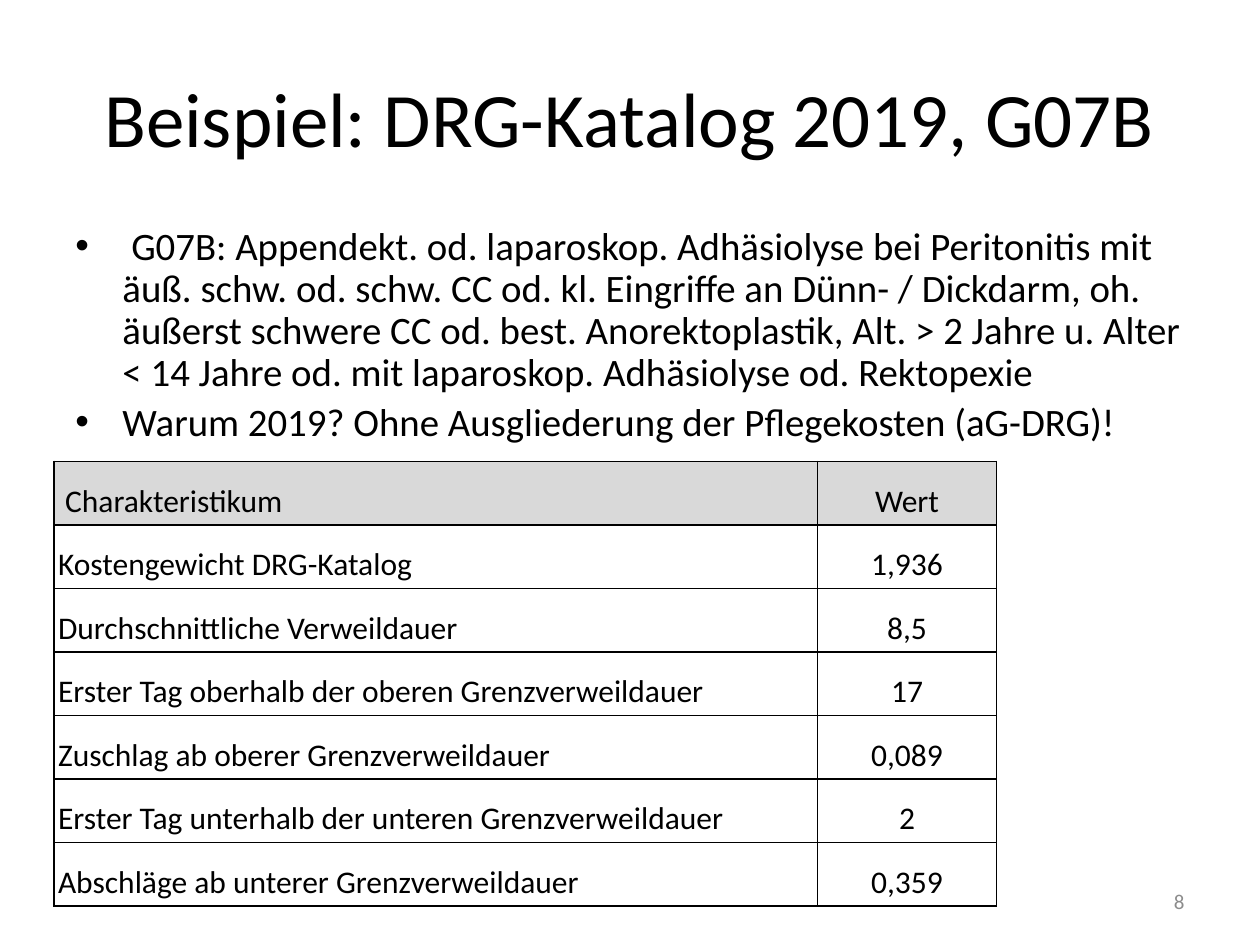
from dataclasses import dataclass

from lxml.etree import SubElement
from pptx import Presentation
from pptx.dml.color import RGBColor
from pptx.enum.text import MSO_ANCHOR, PP_ALIGN
from pptx.oxml.ns import qn
from pptx.util import Cm, Pt


@dataclass(frozen=True)
class Theme:
    """Colours, font and type sizes of the slide."""
    font: str = "Calibri"
    text: str = "000000"
    muted: str = "8C8C8C"
    header: str = "D9D9D9"
    border: str = "000000"
    title_size: float = 44
    body_size: float = 22.2
    table_size: float = 18
    number_size: float = 12


THEME = Theme()

BULLETS = [
    " G07B: Appendekt. od. laparoskop. Adhäsiolyse bei Peritonitis mit äuß. schw. od. schw. CC "
    "od. kl. Eingriffe an Dünn- / Dickdarm, oh. äußerst schwere CC od. best. Anorektoplastik, "
    "Alt. > 2 Jahre u. Alter < 14 Jahre od. mit laparoskop. Adhäsiolyse od. Rektopexie",
    "Warum 2019? Ohne Ausgliederung der Pflegekosten (aG-DRG)!",
]

ROWS = [
    (" Charakteristikum", "Wert"),
    ("Kostengewicht DRG-Katalog", "1,936"),
    ("Durchschnittliche Verweildauer", "8,5"),
    ("Erster Tag oberhalb der oberen Grenzverweildauer", "17"),
    ("Zuschlag ab oberer Grenzverweildauer", "0,089"),
    ("Erster Tag unterhalb der unteren Grenzverweildauer", "2"),
    ("Abschläge ab unterer Grenzverweildauer", "0,359"),
]


def write_text(paragraph, text, *, size, color=THEME.text, align=PP_ALIGN.LEFT,
               before=0, after=0, line_spacing=1.0):
    """Fill a paragraph with one formatted run."""
    paragraph.alignment = align
    paragraph.space_before = Pt(before)
    paragraph.space_after = Pt(after)
    paragraph.line_spacing = line_spacing
    run = paragraph.add_run()
    run.text = text
    run.font.name = THEME.font
    run.font.size = Pt(size)
    run.font.color.rgb = RGBColor.from_string(color)


def add_text_box(slide, left, top, width, height, anchor=MSO_ANCHOR.MIDDLE):
    """Add a wrapping text box and return its text frame."""
    frame = slide.shapes.add_textbox(Cm(left), Cm(top), Cm(width), Cm(height)).text_frame
    frame.word_wrap = True
    frame.vertical_anchor = anchor
    return frame


def set_bullet(paragraph, indent):
    """Give a paragraph a round bullet with a hanging indent."""
    properties = paragraph._p.get_or_add_pPr()
    properties.set("marL", str(indent))
    properties.set("indent", str(-indent))
    SubElement(properties, qn("a:buFont"), typeface="Arial")
    SubElement(properties, qn("a:buChar"), char="•")


def add_bullets(slide, texts):
    """Add the bulleted body text."""
    frame = add_text_box(slide, 1.27, 4.45, 22.86, 5.08, MSO_ANCHOR.TOP)
    for index, text in enumerate(texts):
        paragraph = frame.add_paragraph() if index else frame.paragraphs[0]
        write_text(paragraph, text, size=THEME.body_size,
                   before=0.2 * THEME.body_size, line_spacing=0.9)
        set_bullet(paragraph, Cm(0.95))


def set_borders(cell):
    """Draw a thin line on all four sides of a cell."""
    properties = cell._tc.get_or_add_tcPr()
    for side in "LRTB":
        line = SubElement(properties, qn(f"a:ln{side}"), w=str(Pt(1)))
        fill = SubElement(line, qn("a:solidFill"))
        SubElement(fill, qn("a:srgbClr"), val=THEME.border)


def format_cell(cell, text, align, is_header):
    """Write and style one table cell."""
    cell.vertical_anchor = MSO_ANCHOR.BOTTOM
    cell.margin_left = cell.margin_right = cell.margin_top = cell.margin_bottom = Cm(0.08)
    set_borders(cell)
    if is_header:
        cell.fill.solid()
        cell.fill.fore_color.rgb = RGBColor.from_string(THEME.header)
    else:
        cell.fill.background()
    write_text(cell.text_frame.paragraphs[0], text, size=THEME.table_size,
               align=align, before=2, after=4)


def add_value_table(slide, rows):
    """Add the table of characteristics and values."""
    widths = (15.39, 3.61)
    row_height = 1.28
    table = slide.shapes.add_table(len(rows), len(widths), Cm(1.09), Cm(9.3),
                                   Cm(sum(widths)), Cm(row_height * len(rows))).table
    table.horz_banding = False
    for column, width in zip(table.columns, widths):
        column.width = Cm(width)
    for row_index, values in enumerate(rows):
        table.rows[row_index].height = Cm(row_height)
        for column_index, text in enumerate(values):
            align = PP_ALIGN.CENTER if column_index else PP_ALIGN.LEFT
            format_cell(table.cell(row_index, column_index), text, align, row_index == 0)


def main():
    """Build and save the slide."""
    presentation = Presentation()
    presentation.slide_width, presentation.slide_height = Cm(25.4), Cm(19.05)
    slide = presentation.slides.add_slide(presentation.slide_layouts[6])
    title = add_text_box(slide, 1.27, 0.76, 22.86, 3.18)
    write_text(title.paragraphs[0], "Beispiel: DRG-Katalog 2019, G07B",
               size=THEME.title_size, align=PP_ALIGN.CENTER)
    number = add_text_box(slide, 18.21, 17.65, 5.92, 1.02)
    write_text(number.paragraphs[0], "8", size=THEME.number_size,
               color=THEME.muted, align=PP_ALIGN.RIGHT)
    add_bullets(slide, BULLETS)
    add_value_table(slide, ROWS)
    presentation.save("out.pptx")


if __name__ == "__main__":
    main()
